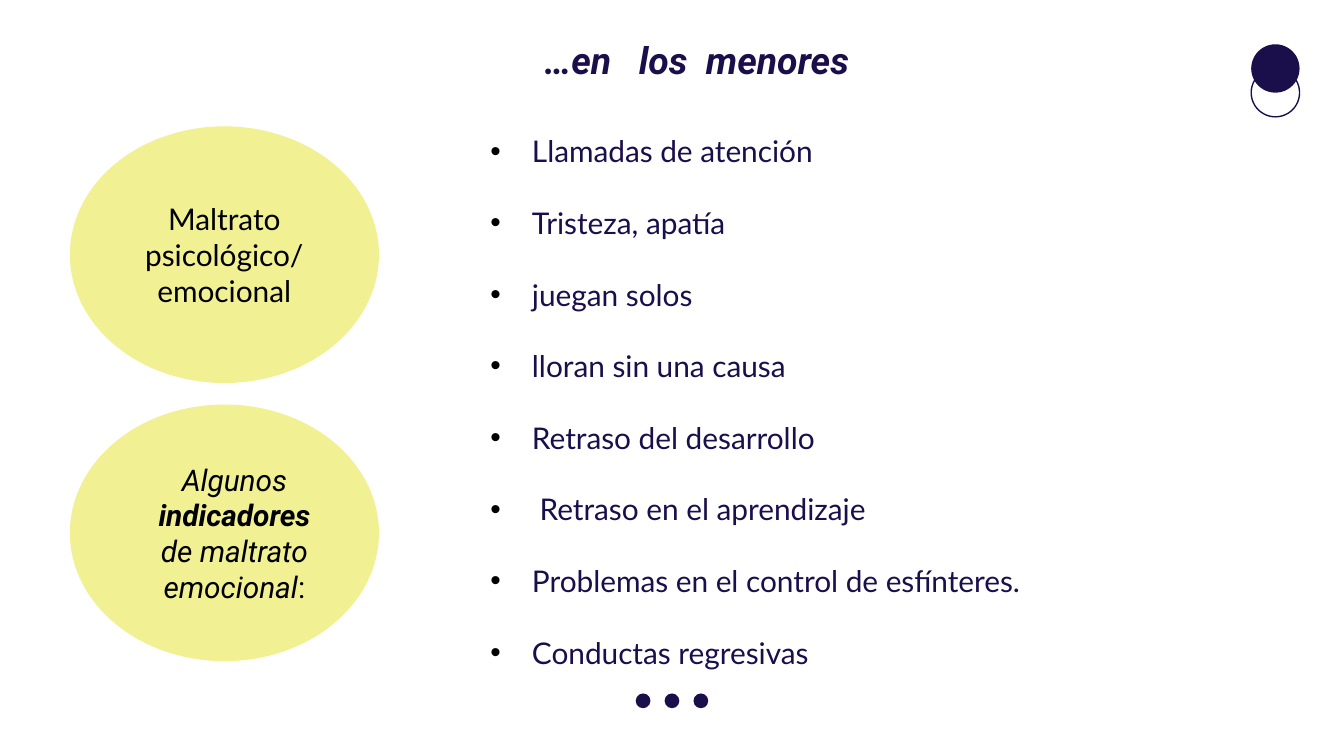
from lxml.etree import SubElement
from pptx import Presentation
from pptx.dml.color import RGBColor
from pptx.enum.shapes import MSO_SHAPE
from pptx.enum.text import MSO_ANCHOR, MSO_AUTO_SIZE, PP_ALIGN
from pptx.oxml.ns import qn
from pptx.util import Inches, Pt

NAVY, YELLOW, BLACK = "1A0E4B", "F1F093", "000000"
SIGNS = [
    "Llamadas de atención",
    "Tristeza, apatía",
    "juegan solos",
    "lloran sin una causa",
    "Retraso del desarrollo",
    " Retraso en el aprendizaje",
    "Problemas en el control de esfínteres.",
    "Conductas regresivas",
]


def color(hex_value):
    """Return the colour for a hex string."""
    return RGBColor.from_string(hex_value)


def add_run(paragraph, text, font, size, hex_value, bold=False, italic=False):
    """Append one formatted run to a paragraph."""
    run = paragraph.add_run()
    run.text = text
    run.font.name = font
    run.font.size = Pt(size)
    run.font.bold = bold
    run.font.italic = italic
    run.font.color.rgb = color(hex_value)


def set_indent(paragraph, left, first=0):
    """Set the left margin and first-line indent in inches."""
    properties = paragraph._p.get_or_add_pPr()
    properties.set("marL", str(Inches(left)))
    properties.set("indent", str(Inches(first)))
    return properties


def set_insets(frame, inset):
    """Give a text frame the same inset on all sides."""
    frame.margin_left = frame.margin_right = Inches(inset)
    frame.margin_top = frame.margin_bottom = Inches(inset)
    frame.word_wrap = True


def add_ellipse(slide, left, top, width, height, fill=None, line=None):
    """Draw an ellipse with an optional fill and outline."""
    ellipse = slide.shapes.add_shape(
        MSO_SHAPE.OVAL, Inches(left), Inches(top), Inches(width), Inches(height))
    ellipse.shadow.inherit = False
    if fill:
        ellipse.fill.solid()
        ellipse.fill.fore_color.rgb = color(fill)
    else:
        ellipse.fill.background()
    if line:
        ellipse.line.color.rgb = color(line)
        ellipse.line.width = Pt(0.75)
    else:
        ellipse.line.fill.background()
    return ellipse


def add_ornaments(slide, corner_left, corner_top, dots_left, dots_top):
    """Draw the overlapping corner circles and the row of three dots."""
    size = 0.36
    add_ellipse(slide, corner_left, corner_top + size / 2, size, size, line=NAVY)
    add_ellipse(slide, corner_left, corner_top, size, size, fill=NAVY)
    for index in range(3):
        add_ellipse(slide, dots_left + index * 0.43 / 2, dots_top, 0.11, 0.11, fill=NAVY)


def add_title(slide, left, top, width, height):
    """Place and format the title placeholder."""
    title = slide.shapes.title
    title.left, title.top = Inches(left), Inches(top)
    title.width, title.height = Inches(width), Inches(height)
    frame = title.text_frame
    set_insets(frame, 0.1)
    frame.auto_size = MSO_AUTO_SIZE.NONE
    frame.vertical_anchor = MSO_ANCHOR.TOP
    heading = frame.paragraphs[0]
    set_indent(heading, 0.15)
    heading.alignment = PP_ALIGN.CENTER
    heading.line_spacing = 1.15
    add_run(heading, "…en   los  menores", "Roboto", 20, NAVY, True, True)


def add_bubble(slide, left, top, width, height, font, lines, indent=0):
    """Draw a yellow ellipse holding centred lines of (text, bold, italic) runs."""
    bubble = add_ellipse(slide, left, top, width, height, fill=YELLOW)
    frame = bubble.text_frame
    set_insets(frame, 0.1)
    frame.vertical_anchor = MSO_ANCHOR.MIDDLE
    for index, runs in enumerate(lines):
        paragraph = frame.add_paragraph() if index else frame.paragraphs[0]
        set_indent(paragraph, indent)
        paragraph.alignment = PP_ALIGN.CENTER
        for text, bold, italic in runs:
            add_run(paragraph, text, font, 16, BLACK, bold, italic)


def add_signs(slide, left, top, width, height):
    """Write the evenly spaced bulleted list of signs."""
    box = slide.shapes.add_textbox(
        Inches(left), Inches(top), Inches(width), Inches(height))
    frame = box.text_frame
    frame.word_wrap = True
    for index, sign in enumerate(SIGNS):
        paragraph = frame.add_paragraph() if index else frame.paragraphs[0]
        properties = set_indent(paragraph, 0.31, -0.31)
        bullet_color = SubElement(properties, qn("a:buClr"))
        SubElement(bullet_color, qn("a:srgbClr"), val=BLACK)
        SubElement(properties, qn("a:buFont"), typeface="Arial")
        SubElement(properties, qn("a:buChar"), char="•")
        if index:
            paragraph.space_before = Pt(19.2)
        add_run(paragraph, sign, "Lato", 16, NAVY)


def main():
    """Build and save the slide."""
    deck = Presentation()
    deck.slide_width = Inches(10)
    deck.slide_height = deck.slide_width * 9 // 16
    slide = deck.slides.add_slide(deck.slide_layouts[5])
    add_ornaments(slide, 9.31, 0.33, 4.73, 5.16)
    add_title(slide, 3.51, 0.13, 3.2, 0.81)
    add_bubble(slide, 0.52, 3.01, 2.3, 1.91, "Roboto", [[
        ("Algunos ", False, True),
        ("indicadores ", True, True),
        ("de maltrato emocional", False, True),
        (":", False, False),
    ]], indent=0.15)
    add_signs(slide, 3.55, 0.94, 6.32, 4.14)
    add_bubble(slide, 0.52, 0.94, 2.3, 1.91, "Lato", [
        [("Maltrato psicológico/", False, False)],
        [("emocional", False, False)],
    ])
    deck.save("out.pptx")


if __name__ == "__main__":
    main()
